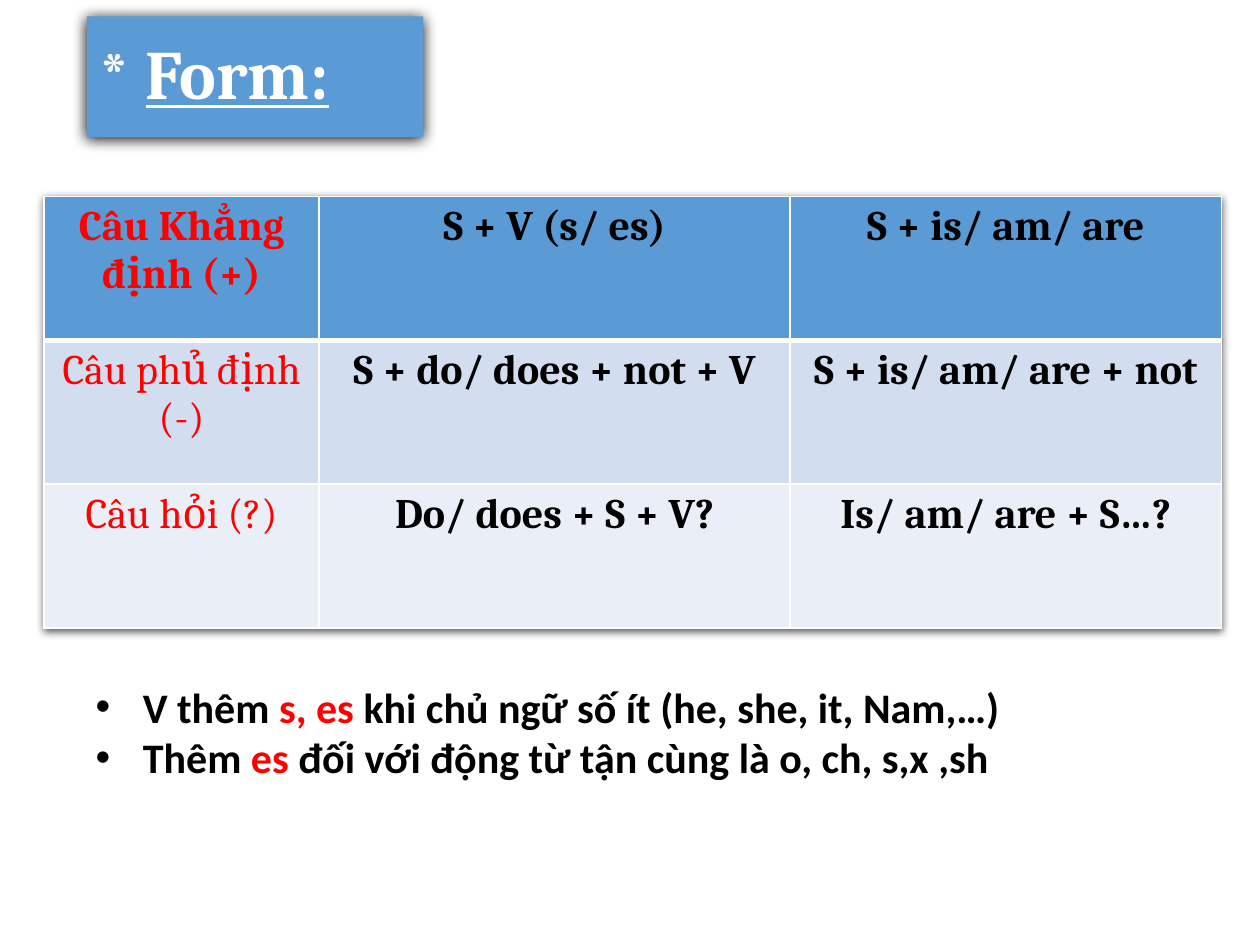
import dataclasses

import lxml.etree
import pptx
import pptx.dml.color
import pptx.enum.shapes
import pptx.enum.text
import pptx.oxml.ns
import pptx.util

Cm = pptx.util.Cm
Pt = pptx.util.Pt
qn = pptx.oxml.ns.qn


@dataclasses.dataclass(frozen=True)
class Theme:
    accent: str = "5B9BD5"
    row_fills: tuple = ("5B9BD5", "D2DEEF", "EAEFF7")
    white: str = "FFFFFF"
    black: str = "000000"
    highlight: str = "FF0000"
    serif: str = "Cambria"
    sans: str = "Calibri"
    title_size: float = 39.6
    body_size: float = 24


def rgb(color):
    return pptx.dml.color.RGBColor.from_string(color)


def child(parent, tag, **attributes):
    values = {name: str(value) for name, value in attributes.items()}
    return lxml.etree.SubElement(parent, qn(tag), values)


class SlideBuilder:
    def __init__(self, slide, theme):
        self.slide = slide
        self.theme = theme

    def style(self, font, face, size, bold=True):
        font.name, font.size, font.bold = face, Pt(size), bold

    def cast_shadow(self, effects, blur, distance, opacity):
        shadow = child(effects, "a:outerShdw", blurRad=Pt(blur), dist=Pt(distance),
                       dir=90 * 60000, algn="ctr", rotWithShape=0)
        color = child(shadow, "a:srgbClr", val=self.theme.black)
        child(color, "a:alpha", val=opacity * 1000)

    def title(self, left, top, width, height, marker, heading):
        banner = self.slide.shapes.add_shape(
            pptx.enum.shapes.MSO_SHAPE.RECTANGLE, left, top, width, height)
        banner.fill.solid()
        banner.fill.fore_color.rgb = rgb(self.theme.accent)
        banner.line.fill.background()
        banner.shadow.inherit = False
        self.cast_shadow(banner.element.spPr.find(qn("a:effectLst")), 8.5, 1, 100)
        frame = banner.text_frame
        frame.word_wrap = True
        frame.vertical_anchor = pptx.enum.text.MSO_ANCHOR.MIDDLE
        line = frame.paragraphs[0]
        line.alignment = pptx.enum.text.PP_ALIGN.LEFT
        line.line_spacing = 0.9
        self.style(line.font, self.theme.serif, self.theme.title_size)
        line.font.color.rgb = rgb(self.theme.white)
        line.add_run().text = marker
        underlined = line.add_run()
        underlined.text = heading
        underlined.font.underline = True

    def borders(self, cell, top, bottom):
        properties = cell._tc.get_or_add_tcPr()
        for side, weight in (("L", 1), ("R", 1), ("T", top), ("B", bottom)):
            border = child(properties, f"a:ln{side}", w=Pt(weight))
            child(child(border, "a:solidFill"), "a:srgbClr", val=self.theme.white)

    def cell(self, cell, wording, fill, color, bold):
        cell.fill.solid()
        cell.fill.fore_color.rgb = rgb(fill)
        cell.text = wording
        line = cell.text_frame.paragraphs[0]
        line.alignment = pptx.enum.text.PP_ALIGN.CENTER
        self.style(line.font, self.theme.serif, self.theme.body_size, bold)
        line.font.color.rgb = rgb(color)

    def table(self, left, top, column_widths, row_height, rows):
        grid = self.slide.shapes.add_table(
            len(rows), len(column_widths), left, top,
            sum(column_widths), row_height * len(rows)).table
        effects = lxml.etree.Element(qn("a:effectLst"))
        grid._tbl.tblPr.insert(0, effects)
        self.cast_shadow(effects, 4.5, 1.5, 63)
        for column, width in zip(grid.columns, column_widths):
            column.width = width
        for r, wordings in enumerate(rows):
            grid.rows[r].height = row_height
            for c, wording in enumerate(wordings):
                cell = grid.cell(r, c)
                self.borders(cell, 3 if r == 1 else 1, 3 if r == 0 else 1)
                color = self.theme.highlight if c == 0 else self.theme.black
                self.cell(cell, wording, self.theme.row_fills[r], color,
                          bold=r == 0 or c > 0)

    def bullets(self, left, top, width, height, notes):
        frame = self.slide.shapes.add_textbox(left, top, width, height).text_frame
        frame.word_wrap = True
        frame.auto_size = pptx.enum.text.MSO_AUTO_SIZE.SHAPE_TO_FIT_TEXT
        for index, note in enumerate(notes):
            line = frame.add_paragraph() if index else frame.paragraphs[0]
            self.style(line.font, self.theme.sans, self.theme.body_size)
            properties = line._p.get_or_add_pPr()
            properties.set("marL", str(Cm(0.95)))
            properties.set("indent", str(-Cm(0.95)))
            bullet_font = lxml.etree.Element(qn("a:buFont"), typeface="Arial")
            properties.insert(0, bullet_font)
            bullet_font.addnext(lxml.etree.Element(qn("a:buChar"), char="•"))
            properties.append(properties.find(qn("a:defRPr")))
            for wording, highlighted in note:
                run = line.add_run()
                run.text = wording
                run.font.color.rgb = rgb(
                    self.theme.highlight if highlighted else self.theme.black)


def main():
    deck = pptx.Presentation()
    deck.slide_width, deck.slide_height = Cm(25.4), Cm(19.05)
    grammar = SlideBuilder(deck.slides.add_slide(deck.slide_layouts[6]), Theme())

    grammar.title(Cm(1.75), Cm(0.33), Cm(6.78), Cm(2.44), "* ", "Form:")
    grammar.table(Cm(0.89), Cm(3.96), (Cm(5.54), Cm(9.5), Cm(8.69)), Cm(2.9), (
        ("Câu Khẳng định (+)", "S + V (s/ es)", "S + is/ am/ are"),
        ("Câu phủ định (-)", "S + do/ does + not + V", "S + is/ am/ are + not"),
        ("Câu hỏi (?)", "Do/ does + S + V?", "Is/ am/ are + S…?"),
    ))
    grammar.bullets(Cm(1.68), Cm(13.61), Cm(21.62), Cm(2.31), (
        (("V thêm ", False), ("s, es ", True),
         ("khi chủ ngữ số ít (he, she, it, Nam,…)", False)),
        (("Thêm ", False), ("es ", True),
         ("đối với động từ tận cùng là o, ch, s,x ,sh", False)),
    ))
    deck.save("out.pptx")


if __name__ == "__main__":
    main()
